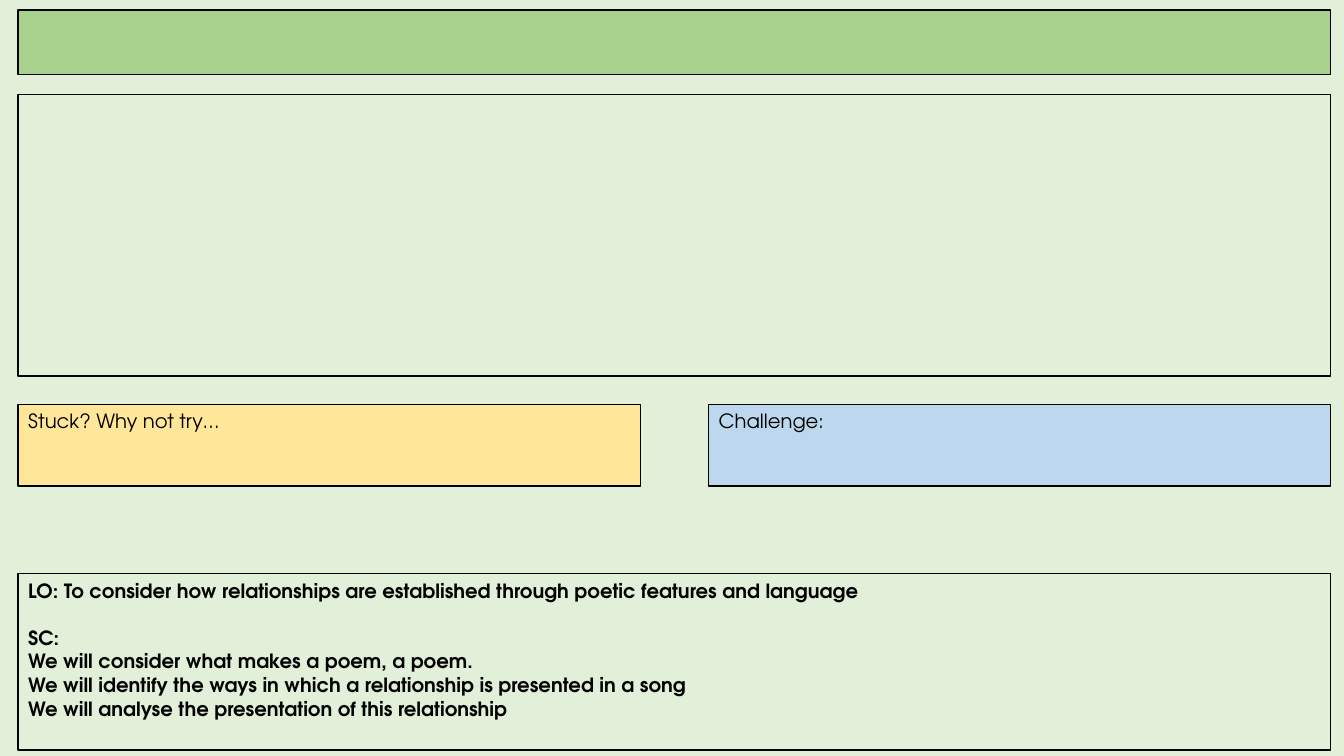
from dataclasses import dataclass

import pptx
import pptx.dml.color
import pptx.enum.shapes
import pptx.enum.text
import pptx.util

RGBColor = pptx.dml.color.RGBColor
BLACK = RGBColor(0x00, 0x00, 0x00)
PALE_GREEN = RGBColor(0xE2, 0xF0, 0xD9)
GREEN = RGBColor(0xA9, 0xD1, 0x8E)
YELLOW = RGBColor(0xFF, 0xE6, 0x99)
BLUE = RGBColor(0xBD, 0xD7, 0xEE)

FONT = "TeX Gyre Adventor"
SLIDE_WIDTH = pptx.util.Inches(13.33)
SLIDE_HEIGHT = pptx.util.Inches(7.5)

# Horizontal measures in percent of the slide's width
MARGIN = 1.35
FULL_WIDTH = 97.67
HALF_WIDTH = 46.29
RIGHT_COLUMN = MARGIN + FULL_WIDTH - HALF_WIDTH

OBJECTIVE = "LO: To consider how relationships are established through poetic features and language"
SUCCESS_CRITERIA = (
    "SC:",
    "We will consider what makes a poem, a poem.",
    "We will identify the ways in which a relationship is presented in a song",
    "We will analyse the presentation of this relationship",
)


@dataclass(frozen=True)
class Panel:
    """A bordered box; left and width are percent of the slide's width, top and height of its height."""
    top: float
    height: float
    fill: RGBColor
    left: float = MARGIN
    width: float = FULL_WIDTH
    lines: tuple[str, ...] = ()
    bold: bool = False
    first_line_gap: float = 0


PANELS = (
    Panel(75.87, 23.33, PALE_GREEN, lines=(OBJECTIVE, *SUCCESS_CRITERIA), bold=True, first_line_gap=17),
    Panel(1.33, 8.53, GREEN),
    Panel(12.53, 37.2, PALE_GREEN),
    Panel(53.47, 10.8, YELLOW, width=HALF_WIDTH, lines=("Stuck? Why not try…",)),
    Panel(53.47, 10.8, BLUE, left=RIGHT_COLUMN, width=HALF_WIDTH, lines=("Challenge:",)),
)


def across(percent: float) -> int:
    return round(SLIDE_WIDTH * percent / 100)


def down(percent: float) -> int:
    return round(SLIDE_HEIGHT * percent / 100)


def write_text(paragraph, text: str, *, size: float = 14, bold: bool = False,
               color: RGBColor = BLACK, space_after: float = 0) -> None:
    paragraph.alignment = pptx.enum.text.PP_ALIGN.LEFT
    paragraph.space_after = pptx.util.Pt(space_after)
    run = paragraph.add_run()
    run.text = text
    run.font.name = FONT
    run.font.size = pptx.util.Pt(size)
    run.font.bold = bold
    run.font.color.rgb = color


def draw_panel(slide: pptx.slide.Slide, panel: Panel) -> None:
    shape = slide.shapes.add_shape(
        pptx.enum.shapes.MSO_SHAPE.RECTANGLE,
        across(panel.left), down(panel.top), across(panel.width), down(panel.height),
    )
    shape.shadow.inherit = False
    shape.fill.solid()
    shape.fill.fore_color.rgb = panel.fill
    shape.line.color.rgb = BLACK
    shape.line.width = pptx.util.Pt(1)

    frame = shape.text_frame
    frame.word_wrap = True
    frame.vertical_anchor = pptx.enum.text.MSO_ANCHOR.TOP
    for index, line in enumerate(panel.lines):
        paragraph = frame.add_paragraph() if index else frame.paragraphs[0]
        gap = 0 if index else panel.first_line_gap
        write_text(paragraph, line, bold=panel.bold, space_after=gap)


def main() -> None:
    presentation = pptx.Presentation()
    presentation.slide_width = SLIDE_WIDTH
    presentation.slide_height = SLIDE_HEIGHT
    slide = presentation.slides.add_slide(presentation.slide_layouts[6])
    slide.background.fill.solid()
    slide.background.fill.fore_color.rgb = PALE_GREEN
    for panel in PANELS:
        draw_panel(slide, panel)
    presentation.save("out.pptx")


if __name__ == "__main__":
    main()
